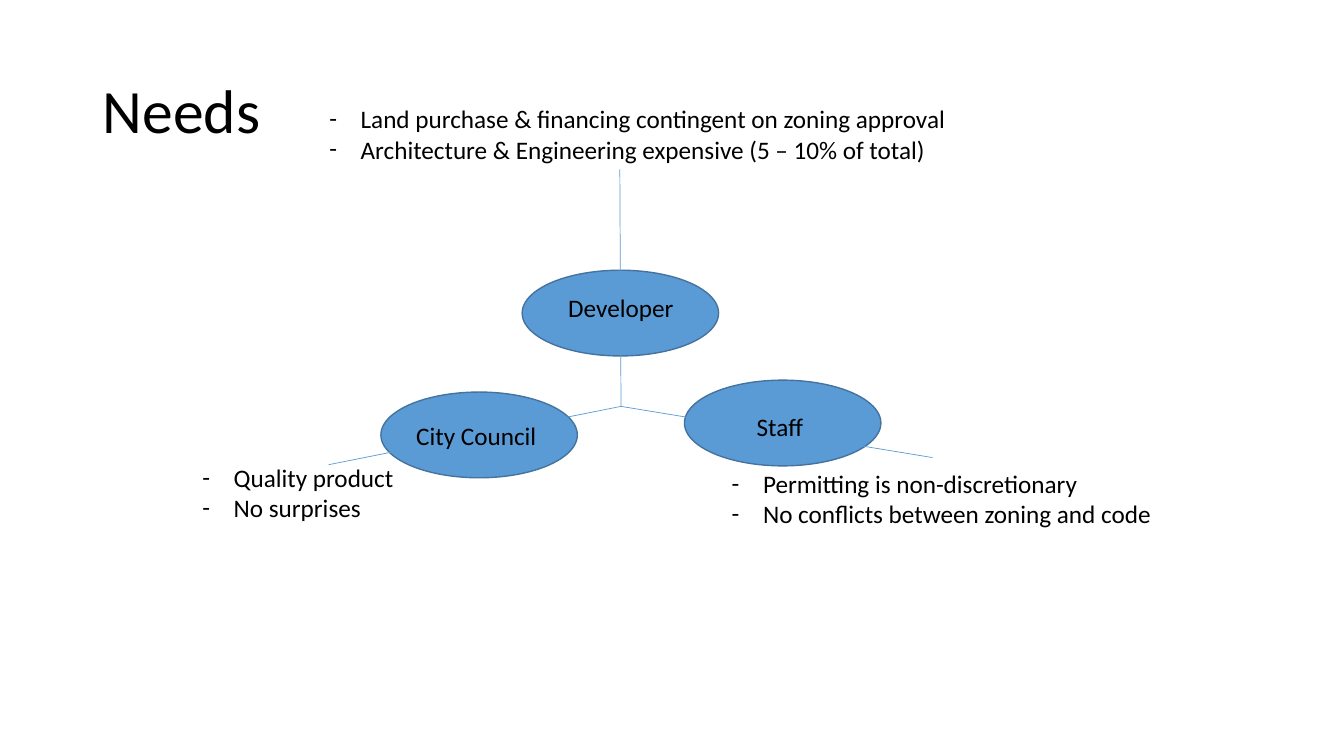
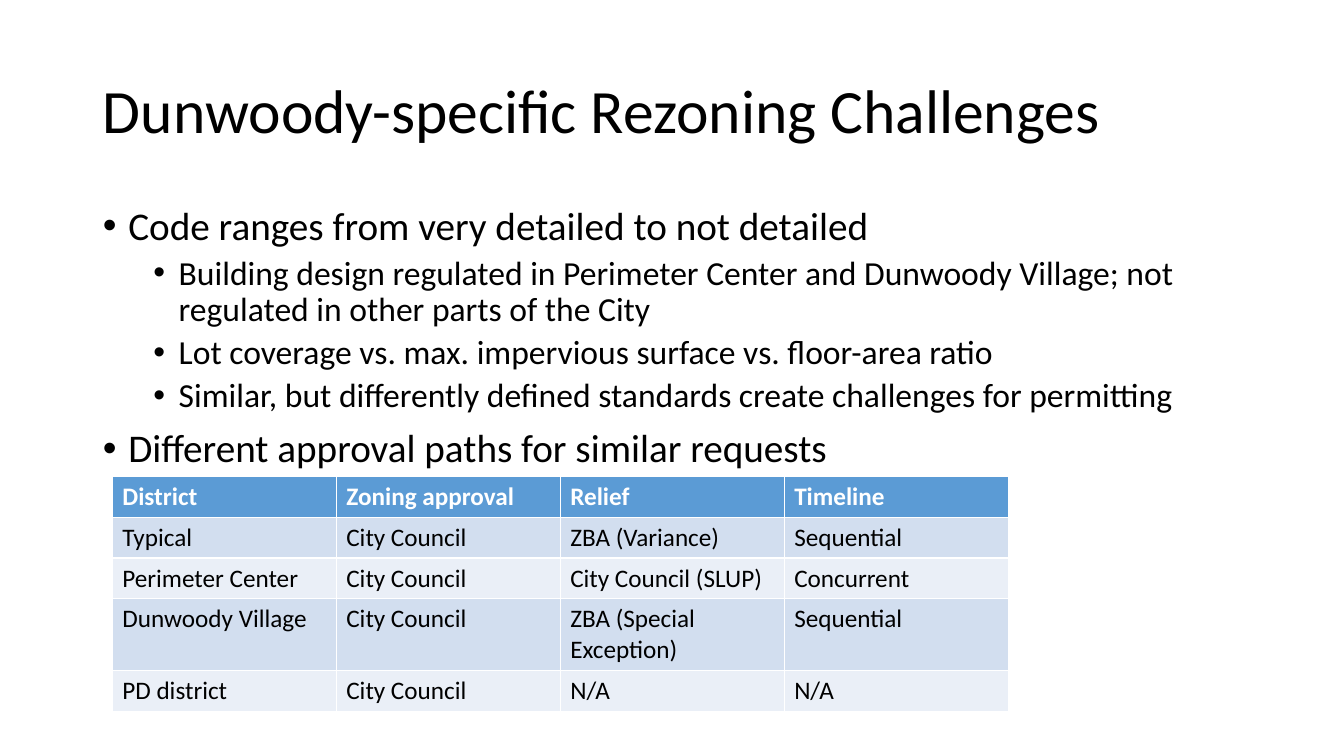
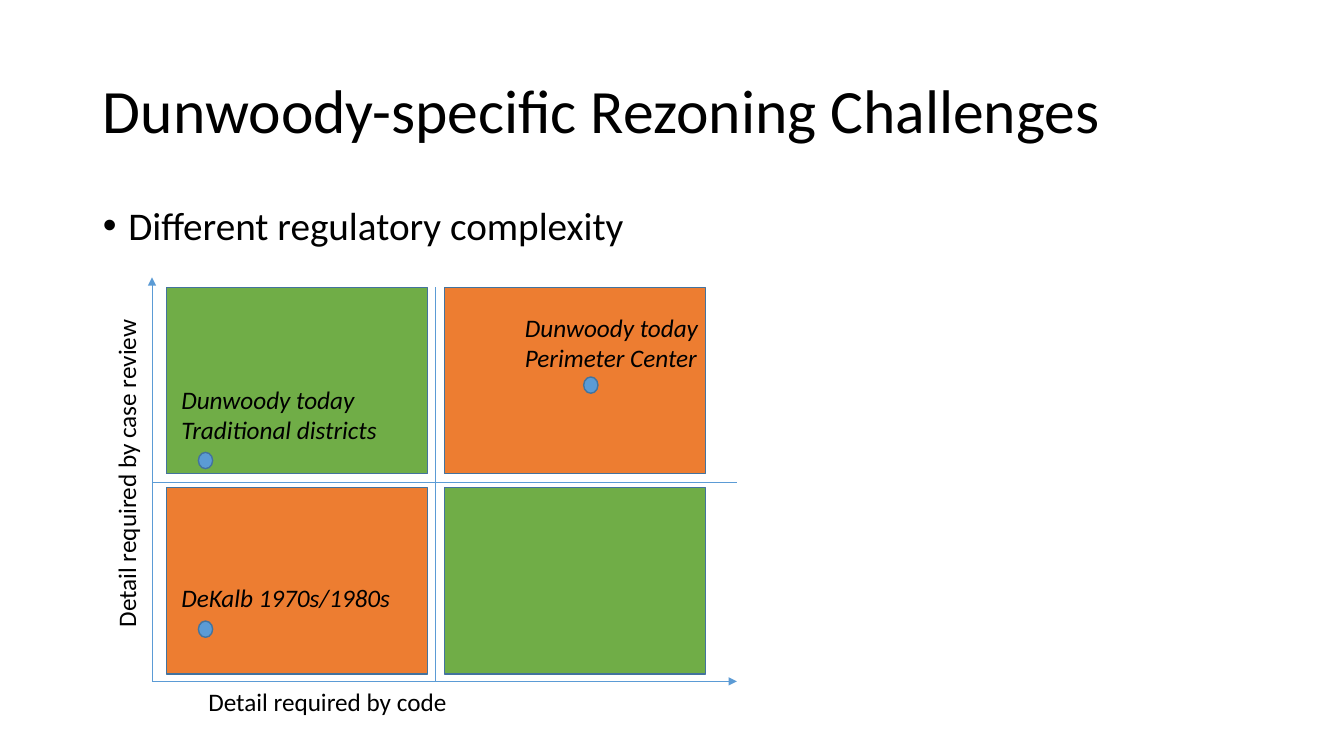
from lxml.etree import SubElement
from pptx import Presentation
from pptx.dml.color import RGBColor
from pptx.enum.shapes import MSO_CONNECTOR as LINK, MSO_SHAPE as SHAPE
from pptx.enum.text import MSO_ANCHOR as ANCHOR, MSO_AUTO_SIZE as FIT, PP_ALIGN as ALIGN
from pptx.oxml.ns import qn
from pptx.util import Cm, Pt

COLORS = {
    "text": "000000", "white": "FFFFFF", "blue": "5B9BD5", "outline": "43739E",
    "orange": "ED7D31", "green": "70AD47", "band_dark": "D2DEEF", "band_light": "EAEFF7",
}
FONT = "Calibri"
TITLE_BOX = (2.34, 1.02, 29.21, 3.68)
BODY_BOX = (2.34, 5.08, 29.21, 12.09)
TITLE_ONLY, TITLE_AND_BODY = 5, 1


def color(key):
    return RGBColor.from_string(COLORS[key])


def lengths(*values):
    return [Cm(value) for value in values]


def set_bullet(paragraph, mark, indent, hanging):
    props = paragraph._p.get_or_add_pPr()
    props.set("marL", str(Cm(indent)))
    props.set("indent", str(-Cm(hanging)))
    SubElement(props, qn("a:buFont")).set("typeface", "Arial" if mark == "•" else FONT)
    SubElement(props, qn("a:buChar")).set("char", mark)


def write(frame, lines, size=18, ink="text", bold=False, italic=False,
          bullet=None, indent=0.79, hanging=0.79, spacing=None):
    for index, line in enumerate(lines):
        paragraph = frame.paragraphs[0] if index == 0 else frame.add_paragraph()
        paragraph.text = line
        if bullet:
            set_bullet(paragraph, bullet, indent, hanging)
        paragraph.alignment = ALIGN.LEFT
        if spacing:
            paragraph.line_spacing = spacing
        for run in paragraph.runs:
            font = run.font
            font.name, font.size = FONT, Pt(size)
            font.bold, font.italic = bold, italic
            font.color.rgb = color(ink)


def add_label(slide, box, lines, wrap=True, rotation=0, **style):
    label = slide.shapes.add_textbox(*lengths(*box))
    label.rotation = rotation
    frame = label.text_frame
    frame.word_wrap = wrap
    frame.auto_size = FIT.SHAPE_TO_FIT_TEXT
    write(frame, lines, **style)


def add_figure(slide, kind, box, fill):
    figure = slide.shapes.add_shape(kind, *lengths(*box))
    figure.shadow.inherit = False
    figure.fill.solid()
    figure.fill.fore_color.rgb = color(fill)
    figure.line.color.rgb = color("outline")
    figure.line.width = Pt(1)


def add_line(slide, start, end, arrow=False):
    link = slide.shapes.add_connector(LINK.STRAIGHT, *lengths(*start, *end))
    link.line.color.rgb = color("blue")
    link.line.width = Pt(0.5)
    props = link._element.spPr
    if arrow:
        SubElement(props.find(qn("a:ln")), qn("a:tailEnd")).set("type", "triangle")
    SubElement(props, qn("a:effectLst"))


def place(holder, box, anchor):
    holder.left, holder.top, holder.width, holder.height = lengths(*box)
    frame = holder.text_frame
    frame.auto_size = FIT.NONE
    frame.vertical_anchor = anchor
    return frame


def add_titled_slide(deck, title, layout):
    slide = deck.slides.add_slide(deck.slide_layouts[layout])
    write(place(slide.shapes.title, TITLE_BOX, ANCHOR.MIDDLE), [title], size=44, spacing=0.9)
    return slide


def add_outline(slide, box, items):
    frame = place(slide.placeholders[1], box, ANCHOR.TOP)
    for index, (level, line) in enumerate(items):
        paragraph = frame.paragraphs[0] if index == 0 else frame.add_paragraph()
        paragraph.text = line
        paragraph.level = level
        set_bullet(paragraph, "•", 0.64 + 1.27 * level, 0.64)
        paragraph.line_spacing = 0.9
        paragraph.space_before = Pt(0 if index == 0 else 5 if level else 10)
        font = paragraph.runs[0].font
        font.name, font.size = FONT, Pt(24 if level else 28)
        font.color.rgb = color("text")


def add_needs(slide, box):
    left, top = box

    def at(x, y):
        return left + x, top + y

    hub = at(10.8, 7.75)
    parties = [
        ("Staff", (12.4, 7.09), (1.57, 0.66), (18.65, 9.04), (13.34, 9.19), 11.23,
         ["Permitting is non-discretionary", "No conflicts between zoning and code"]),
        ("Developer", (8.31, 4.32), (0.91, 0.43), (10.77, 1.78), (3.2, 0), 16.54,
         ["Land purchase & financing contingent on zoning approval",
          "Architecture & Engineering expensive (5 – 10% of total)"]),
        ("City Council", (4.75, 7.39), (0.64, 0.58), (3.43, 9.22), (0, 9.04), 5.38,
         ["Quality product", "No surprises"]),
    ]
    for _, oval, *_ in parties:
        add_figure(slide, SHAPE.OVAL, (*at(*oval), 4.95, 2.16), "blue")
    for name, oval, inset, link_end, note, note_width, needs in parties:
        add_line(slide, hub, at(*link_end))
        add_label(slide, (*at(oval[0] + inset[0], oval[1] + inset[1]), 7.65, 1.02), [name])
        add_label(slide, (*at(*note), note_width, 1.8), needs, wrap=False, bullet="-")


def add_approval_table(slide, box, rows):
    grid = slide.shapes.add_table(len(rows), len(rows[0]), *lengths(*box)).table
    for row_index, row in enumerate(rows):
        header = row_index == 0
        fill = "blue" if header else "band_dark" if row_index % 2 else "band_light"
        for column_index, value in enumerate(row):
            cell = grid.cell(row_index, column_index)
            cell.fill.solid()
            cell.fill.fore_color.rgb = color(fill)
            write(cell.text_frame, [value], bold=header, ink="white" if header else "text")


def add_complexity_map(slide, box):
    left, top, width, height = box

    def at(x, y):
        return left + x, top + y

    quadrant_columns, quadrant_rows = (0.36, 7.37), (0.25, 5.3)
    for row, y in enumerate(quadrant_rows):
        for column, x in enumerate(quadrant_columns):
            fill = "green" if row == column else "orange"
            add_figure(slide, SHAPE.RECTANGLE, (*at(x, y), 6.58, 4.7), fill)

    origin = at(0, height)
    add_line(slide, origin, at(0, 0), arrow=True)
    add_line(slide, origin, at(width, height), arrow=True)
    add_line(slide, at(0, 5.17), at(width, 5.17))
    add_line(slide, at(7.13, 0.25), at(7.13, height))
    add_label(slide, (*at(1.17, height), 11.94, 1.02), ["Detail required by code"])
    add_label(slide, (*at(-6.62, 2.59), 11.94, 1.02), ["Detail required by case review"],
              rotation=270)

    places = [
        ("DeKalb 1970s/1980s", (0.49, 7.56), (5.84, 1.02), (1.17, 8.66)),
        ("Dunwoody today\nTraditional districts", (0.49, 2.56), (5.49, 1.8), (1.17, 4.41)),
        ("Dunwoody today\nPerimeter Center", (9.15, 0.76), (4.93, 1.8), (10.88, 2.51)),
    ]
    for name, corner, size, dot in places:
        add_figure(slide, SHAPE.OVAL, (*at(*dot), 0.36, 0.41), "blue")
        add_label(slide, (*at(*corner), *size), [name], wrap=False, italic=True)


def main():
    deck = Presentation()
    deck.slide_width, deck.slide_height = lengths(33.87, 19.05)
    challenges = "Dunwoody-specific Rezoning Challenges"

    needs = add_titled_slide(deck, "Needs", TITLE_ONLY)
    add_needs(needs, (4.85, 2.49))

    approvals = add_titled_slide(deck, challenges, TITLE_AND_BODY)
    add_outline(approvals, BODY_BOX, [
        (0, "Code ranges from very detailed to not detailed"),
        (1, "Building design regulated in Perimeter Center and Dunwoody Village; "
            "not regulated in other parts of the City"),
        (1, "Lot coverage vs. max. impervious surface vs. floor-area ratio"),
        (1, "Similar, but differently defined standards create challenges for permitting"),
        (0, "Different approval paths for similar requests"),
    ])
    add_approval_table(approvals, (2.83, 12, 22.58, 5.15), [
        ("District", "Zoning approval", "Relief", "Timeline"),
        ("Typical", "City Council", "ZBA (Variance)", "Sequential"),
        ("Perimeter Center", "City Council", "City Council (SLUP)", "Concurrent"),
        ("Dunwoody Village", "City Council", "ZBA (Special Exception)", "Sequential"),
        ("PD district", "City Council", "N/A", "N/A"),
    ])

    complexity = add_titled_slide(deck, challenges, TITLE_AND_BODY)
    add_outline(complexity, BODY_BOX, [(0, "Different regulatory complexity")])
    add_complexity_map(complexity, (3.83, 6.99, 14.74, 10.18))

    deck.save("out.pptx")


if __name__ == "__main__":
    main()
